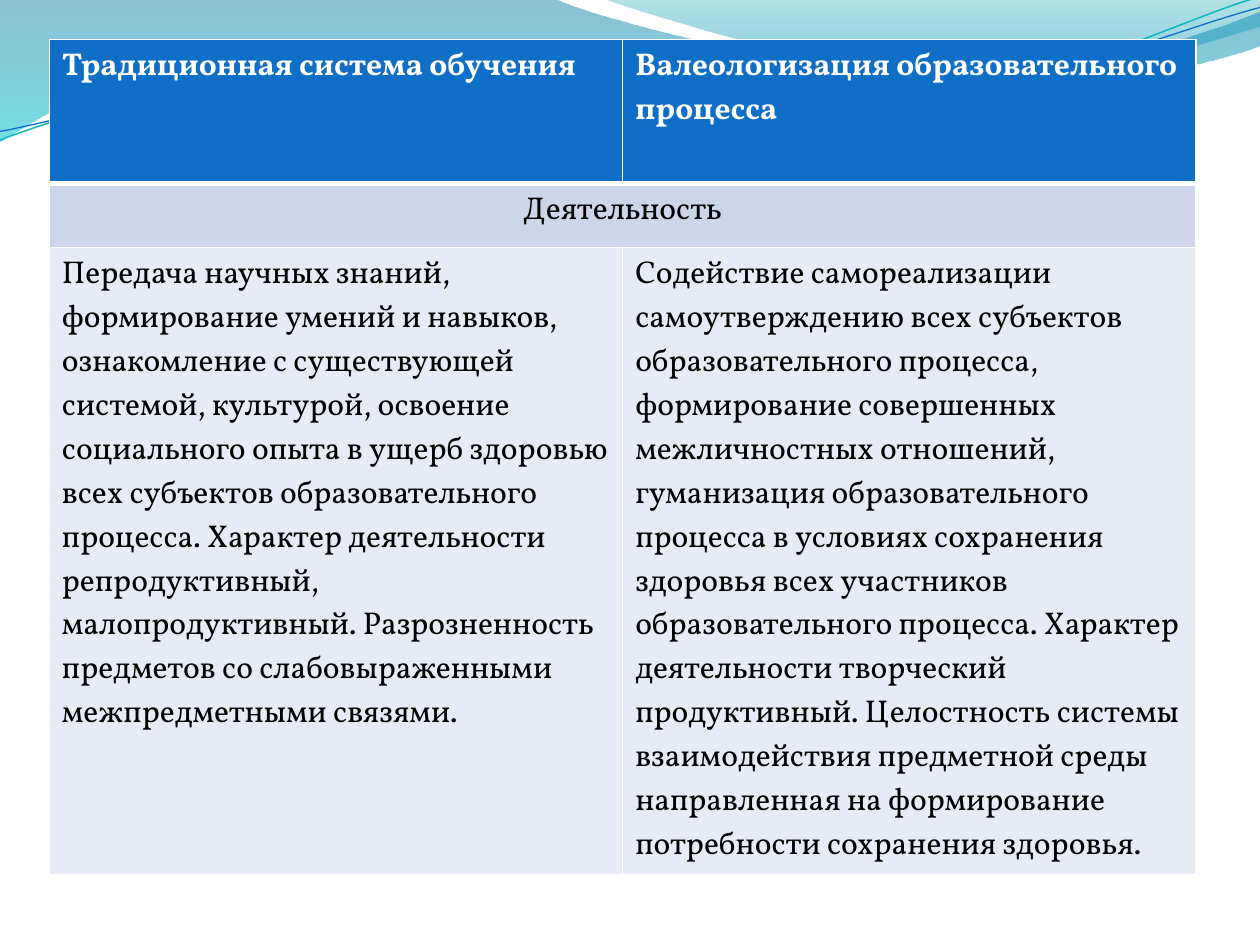
from dataclasses import dataclass

from lxml import etree
from pptx import Presentation
from pptx import util as u
from pptx.dml.color import RGBColor
from pptx.enum import text
from pptx.oxml.ns import qn

COLORS = {
    "header": "0F6FC6",
    "section": "CCD5EA",
    "body": "E7EBF5",
    "white": "FFFFFF",
    "black": "000000",
    "deep_blue": "0074A1",
    "aqua": "00C6CF",
    "teal": "00A1A9",
    "sky": "008BBF",
    "teal_line": "0AB8BF",
    "blue_line": "0F6FC6",
}
FONT = "Vollkorn"
LINE_ROTATION = 357.3


@dataclass(frozen=True)
class Stop:
    color: str
    position: float
    opacity: int


@dataclass(frozen=True)
class Wave:
    start: tuple[float, float]
    segments: tuple[tuple[float, ...], ...]
    stops: tuple[Stop, ...] = ()
    line: str = ""
    width: float = 0


@dataclass(frozen=True)
class Entry:
    row: int
    column: int
    words: str
    fill: str
    header: bool = False
    centered: bool = False


WAVES = (
    Wave(
        (0, 0),
        (
            (317, -0.7),
            (343, 12, 478, 45, 546, 45),
            (614, 45, 690, 19, 720, 6.5),
            (720.7, 26),
            (708, 31.7, 626, 54.7, 537, 54),
            (448, 54, 275, 20, 185, 24.5),
            (93, 26, 33, 60, -0.7, 81.4),
            (0, 0),
        ),
        stops=(Stop("deep_blue", 0, 45), Stop("aqua", 1, 55)),
    ),
    Wave(
        (345, -0.7),
        (
            (366.5, 8, 491, 44.6, 553.7, 46.8),
            (616.3, 49.7, 692, 23, 720, 15),
            (720, 0),
            (345, -0.7),
        ),
        stops=(Stop("teal", 0, 30), Stop("sky", 0.8, 45)),
    ),
    Wave(
        (-1.4, 63),
        (
            (33.8, 51.7, 114.1, 29.4, 199.8, 29.9),
            (284.8, 30.3, 425.8, 67.2, 512.4, 64.9),
            (599, 62.3, 676.5, 25.7, 720.2, 15.5),
        ),
        line="teal_line",
        width=0.85,
    ),
    Wave(
        (-1.1, 58.1),
        (
            (33, 53.7, 118.2, 32.6, 204.1, 33),
            (290.4, 33.4, 428.9, 63.8, 515.5, 61.4),
            (601.4, 59.6, 678.4, 30, 721.4, 21.3),
        ),
        line="blue_line",
        width=0.75,
    ),
)

ENTRIES = (
    Entry(0, 0, "Традиционная система обучения", "header", header=True),
    Entry(0, 1, "Валеологизация образовательного процесса", "header", header=True),
    Entry(1, 0, "Деятельность", "section", centered=True),
    Entry(
        2,
        0,
        "Передача научных знаний, формирование умений и навыков, ознакомление с "
        "существующей системой, культурой, освоение социального опыта в ущерб здоровью "
        "всех субъектов образовательного процесса. Характер деятельности репродуктивный, "
        "малопродуктивный. Разрозненность предметов со слабовыраженными "
        "межпредметными связями.",
        "body",
    ),
    Entry(
        2,
        1,
        "Содействие самореализации самоутверждению всех субъектов образовательного "
        "процесса, формирование совершенных межличностных отношений, гуманизация "
        "образовательного процесса в условиях сохранения здоровья всех участников "
        "образовательного процесса. Характер деятельности творческий продуктивный. "
        "Целостность системы взаимодействия предметной среды направленная на "
        "формирование потребности сохранения здоровья.",
        "body",
    ),
)
COLUMN_WIDTH = 327.6
ROW_HEIGHTS = (82.3, 36.5, 358)
HEADER_BORDERS = {"a:lnL": 1, "a:lnR": 1, "a:lnT": 1, "a:lnB": 3}


def rgb(name: str) -> RGBColor:
    return RGBColor.from_string(COLORS[name])


def bend_segments(shape, wave: Wave) -> None:
    left, top = shape.left, shape.top
    lines = list(shape._element.iter(qn("a:lnTo")))
    for line, segment in zip(lines, wave.segments):
        if len(segment) == 2:
            continue
        curve = etree.Element(qn("a:cubicBezTo"))
        for x, y in zip(segment[::2], segment[1::2]):
            etree.SubElement(
                curve, qn("a:pt"), x=str(u.Pt(x) - left), y=str(u.Pt(y) - top)
            )
        line.getparent().replace(line, curve)


def draw_wave(page, wave: Wave) -> None:
    builder = page.shapes.build_freeform(*map(u.Pt, wave.start))
    ends = [(u.Pt(segment[-2]), u.Pt(segment[-1])) for segment in wave.segments]
    builder.add_line_segments(ends, close=bool(wave.stops))
    shape = builder.convert_to_shape()
    bend_segments(shape, wave)
    shape.shadow.inherit = False
    if not wave.stops:
        shape.rotation = LINE_ROTATION
        shape.fill.background()
        shape.line.color.rgb = rgb(wave.line)
        shape.line.width = u.Pt(wave.width)
        return
    shape.line.fill.background()
    shape.fill.gradient()
    shape.fill.gradient_angle = 270
    for target, stop in zip(shape.fill.gradient_stops, wave.stops):
        target.color.rgb = rgb(stop.color)
        target.position = stop.position
    colors = shape._element.spPr.find(qn("a:gradFill")).iter(qn("a:srgbClr"))
    for color, stop in zip(colors, wave.stops):
        etree.SubElement(color, qn("a:alpha"), val=str(stop.opacity * 1000))


def add_borders(cell, widths: dict[str, float]) -> None:
    properties = cell._tc.get_or_add_tcPr()
    for index, (side, width) in enumerate(widths.items()):
        border = etree.Element(qn(side), w=str(u.Pt(width)))
        fill = etree.SubElement(border, qn("a:solidFill"))
        etree.SubElement(fill, qn("a:srgbClr"), val=COLORS["white"])
        properties.insert(index, border)


def fill_cell(table, entry: Entry) -> None:
    cell = table.cell(entry.row, entry.column)
    cell.fill.solid()
    cell.fill.fore_color.rgb = rgb(entry.fill)
    if entry.header:
        add_borders(cell, HEADER_BORDERS)
    cell.text = entry.words
    para = cell.text_frame.paragraphs[0]
    para.alignment = text.PP_ALIGN.CENTER if entry.centered else text.PP_ALIGN.LEFT
    para.font.name = FONT
    para.font.size = u.Pt(18)
    para.font.bold = entry.header
    para.font.color.rgb = rgb("white" if entry.header else "black")


def draw_table(page) -> None:
    frame = page.shapes.add_table(
        3, 2, u.Pt(28.2), u.Pt(22.6), u.Pt(2 * COLUMN_WIDTH), u.Pt(sum(ROW_HEIGHTS))
    )
    table = frame.table
    for column in table.columns:
        column.width = u.Pt(COLUMN_WIDTH)
    for row, height in zip(table.rows, ROW_HEIGHTS):
        row.height = u.Pt(height)
    table.cell(1, 0).merge(table.cell(1, 1))
    for entry in ENTRIES:
        fill_cell(table, entry)


def main() -> None:
    deck = Presentation()
    deck.slide_width, deck.slide_height = u.Pt(720), u.Pt(540)
    page = deck.slides.add_slide(deck.slide_layouts[6])
    for wave in WAVES:
        draw_wave(page, wave)
    draw_table(page)
    deck.save("out.pptx")


if __name__ == "__main__":
    main()
